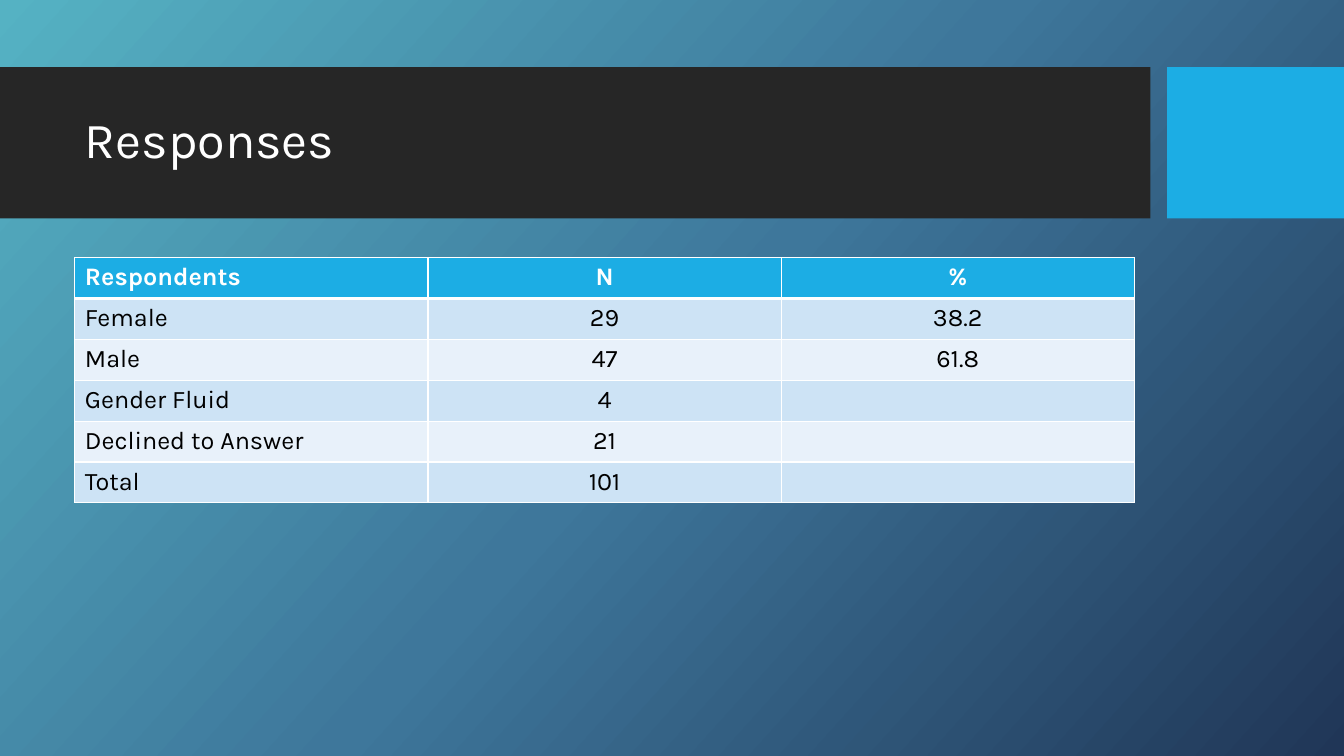
from lxml.etree import SubElement
from pptx import Presentation
from pptx.dml.color import RGBColor
from pptx.enum.shapes import MSO_SHAPE
from pptx.enum.text import MSO_ANCHOR, PP_ALIGN
from pptx.oxml.ns import qn
from pptx.util import Pt

HUES = {
    "white": "FFFFFF", "black": "000000", "dark": "262626", "blue": "1CADE4",
    "odd": "CDE3F5", "even": "E8F1FA",
    "teal": "55B2C3", "steel": "3E779B", "navy": "203657",
}
ROWS = [
    ("Respondents", "N", "%"),
    ("Female", "29", "38.2"),
    ("Male", "47", "61.8"),
    ("Gender Fluid", "4", ""),
    ("Declined to Answer", "21", ""),
    ("Total", "101", ""),
]


class Deck:
    font = "Karla"

    def __init__(self, wide, high):
        self.show = Presentation()
        self.show.slide_width, self.show.slide_height = Pt(wide), Pt(high)
        self.slide = self.show.slides.add_slide(self.show.slide_layouts[5])

    def hue(self, name):
        return RGBColor.from_string(HUES[name])

    def back(self, stops, angle):
        self.slide.background.fill.gradient()
        grad = self.slide.element.find(".//" + qn("a:gradFill"))
        for child in list(grad):
            grad.remove(child)
        group = SubElement(grad, qn("a:gsLst"))
        for place, name in stops:
            stop = SubElement(group, qn("a:gs"), pos=str(place * 1000))
            SubElement(stop, qn("a:srgbClr"), val=HUES[name])
        SubElement(grad, qn("a:lin"), ang=str(angle * 60000), scaled="0")

    def bar(self, left, top, wide, high, fill):
        shape = self.slide.shapes.add_shape(
            MSO_SHAPE.RECTANGLE, Pt(left), Pt(top), Pt(wide), Pt(high))
        shape.shadow.inherit = False
        shape.fill.solid()
        shape.fill.fore_color.rgb = self.hue(fill)
        shape.line.fill.background()

    def words(self, para, text, size, color, bold=False):
        run = para.add_run()
        run.text = text
        font = run.font
        font.name, font.size, font.bold = self.font, Pt(size), bold
        font.color.rgb = self.hue(color)

    def title(self, text, left, top, wide, high):
        box = self.slide.shapes.title
        box.left, box.top, box.width, box.height = map(Pt, (left, top, wide, high))
        self.slide.shapes.element.append(box.element)
        frame = box.text_frame
        frame.word_wrap = True
        frame.vertical_anchor = MSO_ANCHOR.MIDDLE
        para = frame.paragraphs[0]
        para.alignment = PP_ALIGN.LEFT
        para.line_spacing = 0.9
        self.words(para, text, 36, "white")

    def edge(self, cell, sides):
        props = cell._tc.get_or_add_tcPr()
        for side, width in sides.items():
            line = SubElement(props, qn("a:ln" + side), w=str(Pt(width)))
            fill = SubElement(line, qn("a:solidFill"))
            SubElement(fill, qn("a:srgbClr"), val=HUES["white"])

    def table(self, rows, left, top, wide, high):
        count = len(rows[0])
        grid = self.slide.shapes.add_table(
            len(rows), count, Pt(left), Pt(top), Pt(wide), Pt(high * len(rows))).table
        for col in grid.columns:
            col.width = Pt(wide / count)
        for i, row in enumerate(rows):
            grid.rows[i].height = Pt(high)
            head = i == 0
            fill = "blue" if head else ("even", "odd")[i % 2]
            sides = {"L": 1, "R": 1, "T": 3 if i == 1 else 1, "B": 3 if head else 1}
            for j, text in enumerate(row):
                cell = grid.cell(i, j)
                self.edge(cell, sides)
                cell.fill.solid()
                cell.fill.fore_color.rgb = self.hue(fill)
                para = cell.text_frame.paragraphs[0]
                para.alignment = PP_ALIGN.CENTER if j else PP_ALIGN.LEFT
                if text:
                    self.words(para, text, 18, "white" if head else "black", head)


def main():
    deck = Deck(960, 540)
    deck.back([(0, "teal"), (50, "steel"), (100, "navy")], 42)
    deck.bar(0, 48, 821.75, 108, "dark")
    deck.bar(833.75, 48, 126.25, 108, "blue")
    deck.title("Responses", 53.5, 59, 756.75, 85)
    deck.table(ROWS, 53.5, 184, 756.75, 29.2)
    deck.show.save("out.pptx")


if __name__ == "__main__":
    main()
